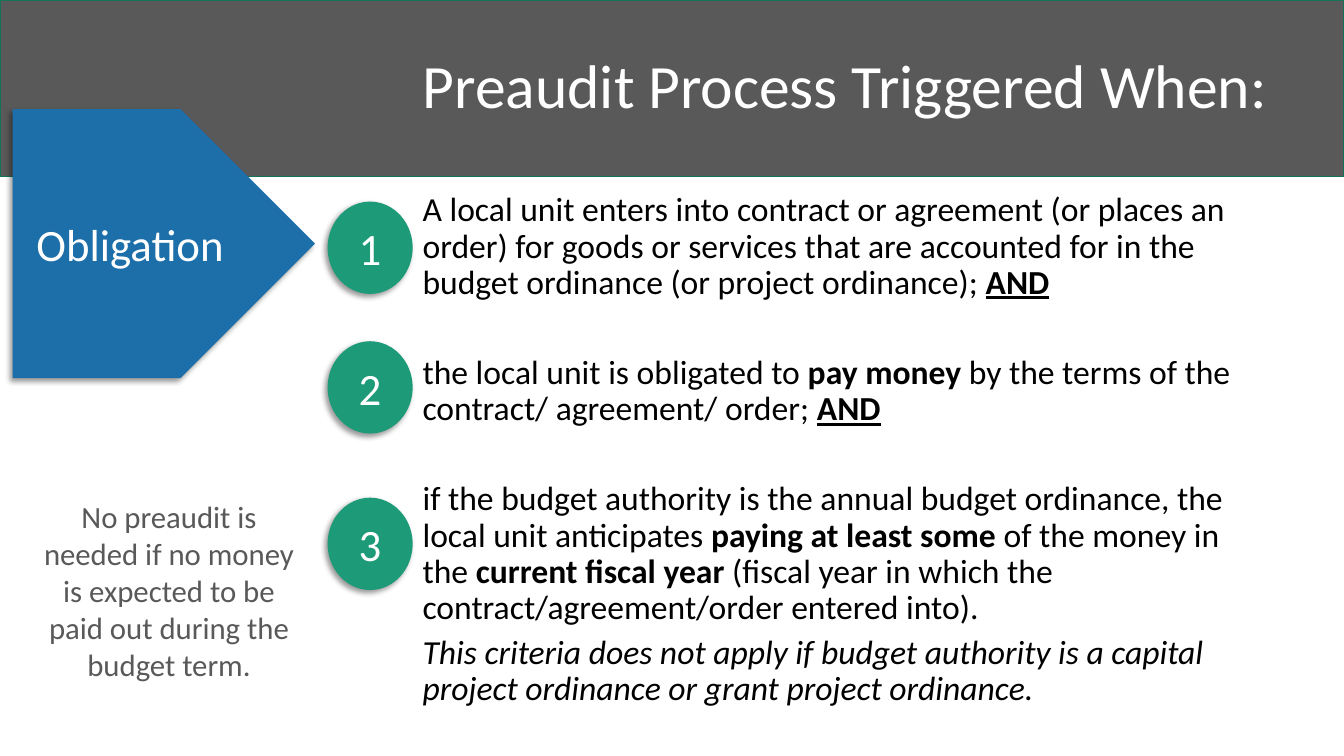
import dataclasses

import lxml.etree
import pptx
import pptx.dml.color
import pptx.enum.shapes
import pptx.enum.text
import pptx.oxml
import pptx.oxml.ns
import pptx.util

SCALE = 9525
KIND = pptx.enum.shapes.MSO_SHAPE
ALIGN = pptx.enum.text.PP_ALIGN
ANCHOR = pptx.enum.text.MSO_ANCHOR


@dataclasses.dataclass(frozen=True)
class Theme:
    font: str = "Calibri"
    gray: str = "595959"
    edge: str = "157259"
    blue: str = "1D6FA9"
    green: str = "1D9A78"
    white: str = "FFFFFF"
    black: str = "000000"
    head: int = 44
    label: int = 32
    body: int = 24
    note: int = 22


THEME = Theme()

RULES = [
    (6, [("A local unit enters into contract or agreement (or places an order) for "
          "goods or services that are accounted for in the budget ordinance "
          "(or project ordinance); ", ""), ("AND", "bu")]),
    (38.4, [("the local unit is obligated to ", ""), ("pay money ", "b"),
            ("by the terms of the contract/ agreement/ order; ", ""), ("AND", "bu")]),
    (38.4, [("if the budget authority is the annual budget ordinance, the local unit "
             "anticipates ", ""), ("paying at least some", "b"),
            (" of the money in the ", ""), ("current fiscal year", "b"),
            (" (fiscal year in which the contract/agreement/order entered into).", "")]),
    (6, [("This criteria does not apply if budget authority is a capital project "
          "ordinance or grant project ordinance.", "i")]),
]


def px(*nums):
    return [pptx.util.Emu(num * SCALE) for num in nums]


def tint(code):
    return pptx.dml.color.RGBColor.from_string(code)


def write(shape, text, size, color, align=ALIGN.CENTER, anchor=ANCHOR.MIDDLE, lead=None):
    frame = shape.text_frame
    frame.word_wrap = True
    frame.auto_size = pptx.enum.text.MSO_AUTO_SIZE.NONE
    frame.vertical_anchor = anchor
    paras = [(0, [(text, "")])] if isinstance(text, str) else text
    for index, (gap, spans) in enumerate(paras):
        para = frame.add_paragraph() if index else frame.paragraphs[0]
        para.alignment = align
        para.space_before = pptx.util.Pt(gap)
        if lead:
            para.line_spacing = lead
        for words, style in spans:
            run = para.add_run()
            run.text = words
            font = run.font
            font.name = THEME.font
            font.size = pptx.util.Pt(size)
            font.color.rgb = tint(color)
            font.bold = "b" in style
            font.italic = "i" in style
            font.underline = "u" in style


def block(slide, kind, box, fill=None, edge=None):
    shape = slide.shapes.add_shape(kind, *px(*box))
    shape.shadow.inherit = False
    if fill:
        shape.fill.solid()
        shape.fill.fore_color.rgb = tint(fill)
    else:
        shape.fill.background()
    if edge:
        shape.line.color.rgb = tint(edge)
        shape.line.width = pptx.util.Pt(1)
    else:
        shape.line.fill.background()
    return shape


def shade(shape):
    name = pptx.oxml.ns.qn
    effects = shape.element.spPr.find(name("a:effectLst"))
    outer = lxml.etree.SubElement(
        effects, name("a:outerShdw"), blurRad="50800", dist="38100",
        dir="8100000", algn="tr", rotWithShape="0")
    color = lxml.etree.SubElement(outer, name("a:srgbClr"), val=THEME.black)
    lxml.etree.SubElement(color, name("a:alpha"), val="40000")


def badge(slide, kind, box, fill, text):
    shape = block(slide, kind, box, fill)
    shade(shape)
    write(shape, text, THEME.label, THEME.white)


def header(slide, text):
    title = slide.shapes.title
    title.left, title.top, title.width, title.height = px(393, 14, 886, 140)
    write(title, text, THEME.head, THEME.white, align=ALIGN.LEFT, lead=0.9)
    band = block(slide, KIND.RECTANGLE, (0, 0, 1280, 168), THEME.gray, THEME.edge)
    title.element.addprevious(band.element)


def main():
    deck = pptx.Presentation()
    deck.slide_width, deck.slide_height = px(1280, 720)
    slide = deck.slides.add_slide(deck.slide_layouts[5])
    header(slide, "Preaudit Process Triggered When:")

    body = slide.shapes.add_textbox(*px(393, 179, 792, 410))
    write(body, RULES, THEME.body, THEME.black,
          align=ALIGN.LEFT, anchor=ANCHOR.TOP, lead=0.9)

    badge(slide, KIND.PENTAGON, (12, 104, 288, 256), THEME.blue, "Obligation")
    for num, top in enumerate((192, 325, 474), 1):
        badge(slide, KIND.OVAL, (312, top, 81, 88), THEME.green, str(num))

    note = block(slide, KIND.ROUNDED_RECTANGLE, (17, 445, 288, 234))
    write(note, "No preaudit is needed if no money is expected to be paid out "
          "during the budget term.", THEME.note, THEME.gray)

    deck.save("out.pptx")


if __name__ == "__main__":
    main()
